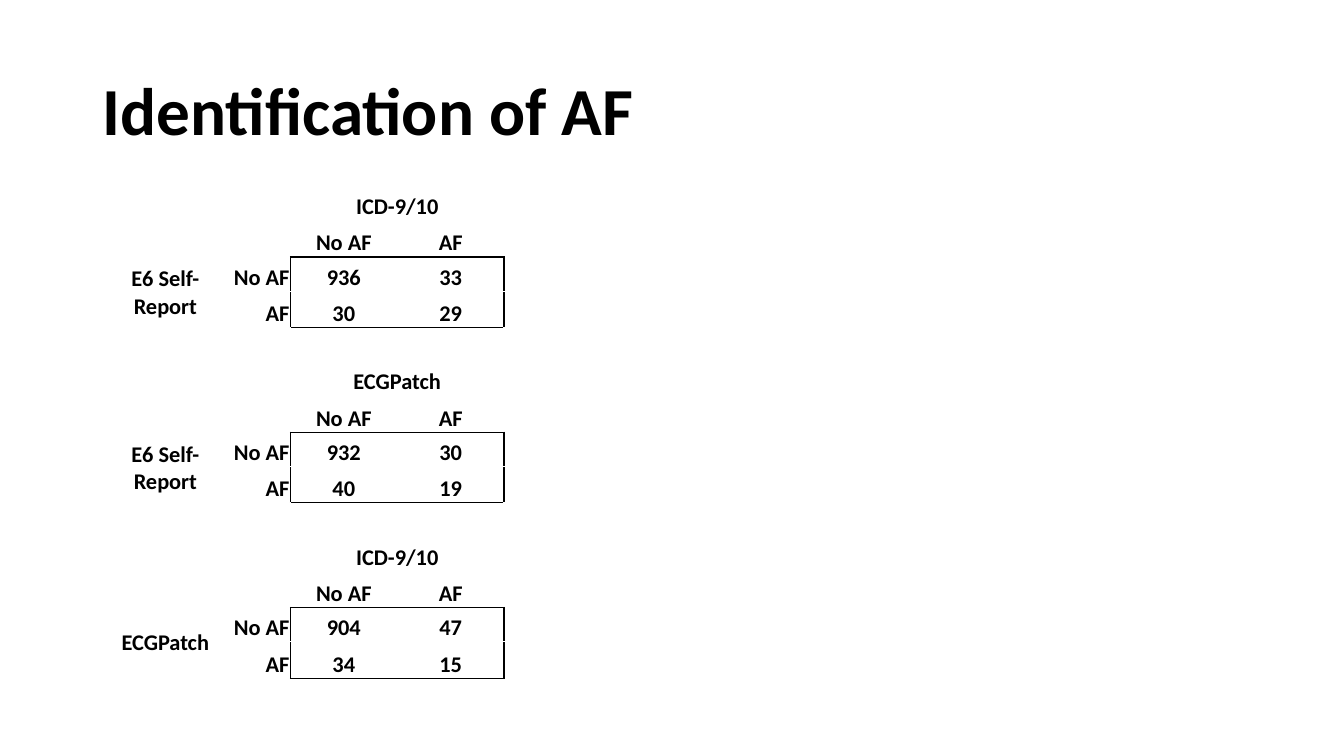
"""Build the slide of cross tables on the identification of AF."""
from dataclasses import dataclass

from lxml import etree
from pptx import Presentation
from pptx.dml.color import RGBColor
from pptx.enum.text import MSO_ANCHOR, PP_ALIGN
from pptx.oxml.ns import qn
from pptx.slide import Slide
from pptx.table import Table, _Cell
from pptx.text.text import _Paragraph
from pptx.util import Inches, Pt

LEFT, CENTER, RIGHT = PP_ALIGN.LEFT, PP_ALIGN.CENTER, PP_ALIGN.RIGHT
MIDDLE, BOTTOM = MSO_ANCHOR.MIDDLE, MSO_ANCHOR.BOTTOM


@dataclass(frozen=True)
class Theme:
    font: str = "Calibri"
    ink: str = "000000"
    paper: str = "FFFFFF"
    title_size: int = 48
    table_size: int = 16
    border: int = 1


@dataclass(frozen=True)
class CrossTable:
    row_source: str
    col_source: str
    counts: tuple[tuple[int, int], tuple[int, int]]


THEME = Theme()
LEVELS = ("No AF", "AF")
COL_WIDTHS = (1.08, 0.7, 1.06, 1.06)
ROW_HEIGHTS = (0.34, 0.36, 0.34, 0.36, 0.34)
BLOCK = len(ROW_HEIGHTS)
FIRST = 2
CROSS_TABLES = (
    CrossTable("E6 Self-Report", "ICD-9/10", ((936, 33), (30, 29))),
    CrossTable("E6 Self-Report", "ECGPatch", ((932, 30), (40, 19))),
    CrossTable("ECGPatch", "ICD-9/10", ((904, 47), (34, 15))),
)


def style(p: _Paragraph, size: int, align: PP_ALIGN) -> None:
    """Align a paragraph and format its runs."""
    p.alignment = align
    for r in p.runs:
        r.font.name = THEME.font
        r.font.size = Pt(size)
        r.font.bold = True
        r.font.color.rgb = RGBColor.from_string(THEME.ink)


def write(cell: _Cell, text: str, align: PP_ALIGN = CENTER,
          anchor: MSO_ANCHOR = BOTTOM) -> None:
    """Put formatted text in a table cell."""
    cell.text_frame.text = text
    cell.vertical_anchor = anchor
    style(cell.text_frame.paragraphs[0], THEME.table_size, align)


def set_borders(cell: _Cell, row: int, col: int) -> None:
    """Draw dark borders around the counts and light ones elsewhere."""
    in_rows = row % BLOCK in (FIRST, FIRST + 1)
    in_cols = col >= FIRST
    edges = (FIRST, FIRST + len(LEVELS))
    dark = {
        "a:lnL": in_rows and col in edges,
        "a:lnR": in_rows and col + 1 in edges,
        "a:lnT": in_cols and row % BLOCK in edges,
        "a:lnB": in_cols and (row + 1) % BLOCK in edges,
    }
    tc_pr = cell._tc.get_or_add_tcPr()
    for tag, is_dark in dark.items():
        ln = etree.SubElement(tc_pr, qn(tag), w=str(Pt(THEME.border)))
        fill = etree.SubElement(ln, qn("a:solidFill"))
        etree.SubElement(fill, qn("a:srgbClr"),
                         val=THEME.ink if is_dark else THEME.paper)


def prepare_cell(cell: _Cell, row: int, col: int) -> None:
    """Set the insets, borders and fill of a cell."""
    cell.margin_left = cell.margin_right = cell.margin_top = Inches(0.01)
    cell.margin_bottom = 0
    set_borders(cell, row, col)
    cell.fill.background()


def fill_block(table: Table, top: int, data: CrossTable) -> None:
    """Write one cross table from the given row down."""
    body = top + FIRST
    table.cell(top, FIRST).merge(table.cell(top, FIRST + 1))
    table.cell(body, 0).merge(table.cell(body + 1, 0))
    write(table.cell(top, FIRST), data.col_source)
    write(table.cell(body, 0), data.row_source, anchor=MIDDLE)
    for i, level in enumerate(LEVELS):
        write(table.cell(top + 1, FIRST + i), level)
        write(table.cell(body + i, 1), level, RIGHT)
        for j, count in enumerate(data.counts[i]):
            write(table.cell(body + i, FIRST + j), str(count))


def add_title(s: Slide, text: str) -> None:
    """Add the slide title."""
    sp = s.shapes.add_textbox(Inches(0.92), Inches(0.4), Inches(11.5), Inches(1.45))
    tf = sp.text_frame
    tf.word_wrap = True
    tf.vertical_anchor = MIDDLE
    tf.text = text
    p = tf.paragraphs[0]
    p.line_spacing = 0.9
    style(p, THEME.title_size, LEFT)


def add_cross_tables(s: Slide) -> None:
    """Add the table that stacks all cross tables."""
    heights = (ROW_HEIGHTS * len(CROSS_TABLES))[:-1]
    table = s.shapes.add_table(
        len(heights), len(COL_WIDTHS), Inches(1.1), Inches(1.85),
        Inches(sum(COL_WIDTHS)), Inches(sum(heights))).table
    table.first_row = table.horz_banding = False
    for col, width in enumerate(COL_WIDTHS):
        table.columns[col].width = Inches(width)
    for row, height in enumerate(heights):
        table.rows[row].height = Inches(height)
        for col in range(len(COL_WIDTHS)):
            prepare_cell(table.cell(row, col), row, col)
    for i, data in enumerate(CROSS_TABLES):
        fill_block(table, i * BLOCK, data)


def main() -> None:
    """Build and save the presentation."""
    prs = Presentation()
    prs.slide_width, prs.slide_height = Inches(13.33), Inches(7.5)
    s = prs.slides.add_slide(prs.slide_layouts[6])
    add_title(s, "Identification of AF")
    add_cross_tables(s)
    prs.save("out.pptx")


if __name__ == "__main__":
    main()
